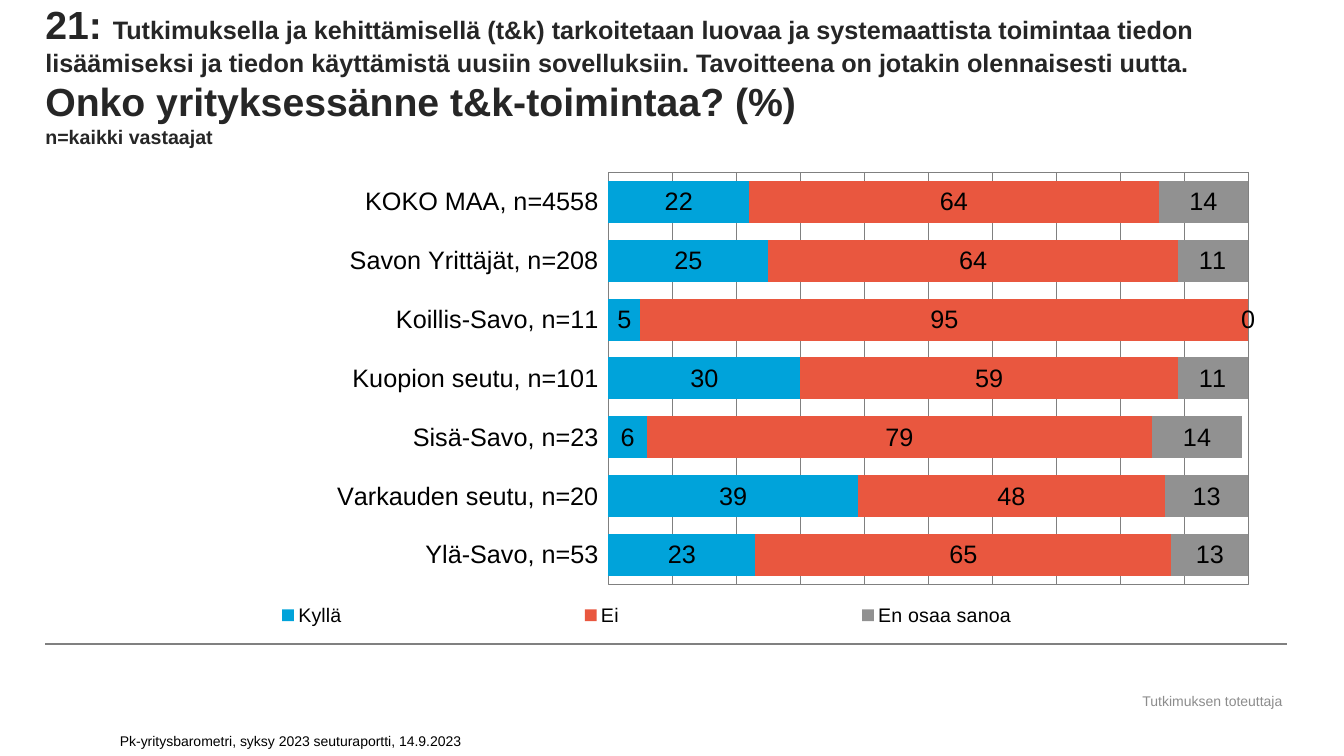
from lxml import etree
from pptx import Presentation
from pptx.chart.data import CategoryChartData
from pptx.dml.color import RGBColor
from pptx.enum.chart import XL_CHART_TYPE, XL_LEGEND_POSITION, XL_TICK_LABEL_POSITION, XL_TICK_MARK
from pptx.enum.shapes import MSO_CONNECTOR
from pptx.enum.text import MSO_ANCHOR, PP_ALIGN
from pptx.oxml import parse_xml
from pptx.oxml.ns import nsdecls, qn
from pptx.util import Inches, Pt

STACKED = XL_CHART_TYPE.BAR_STACKED
BOTTOM, MIDDLE = MSO_ANCHOR.BOTTOM, MSO_ANCHOR.MIDDLE
LEFT, CENTER = PP_ALIGN.LEFT, PP_ALIGN.CENTER
FONT = "Arial"
COLORS = {
    "title": "262626", "text": "000000", "note": "8C8C8C", "line": "808080",
    "yes": "00A3DA", "no": "E9573F", "unsure": "919191",
}


def color(name):
    return RGBColor.from_string(COLORS[name])


def add_text(runs, at, tone="text", bold=False, anchor=BOTTOM, align=LEFT, inset=None):
    box = slide.shapes.add_textbox(*[Inches(n) for n in at])
    frame = box.text_frame
    frame.word_wrap = True
    frame.vertical_anchor = anchor
    if inset is not None:
        frame.margin_left = frame.margin_right = Inches(inset)
        frame.margin_top = frame.margin_bottom = Inches(inset)
    para = frame.paragraphs[0]
    para.alignment = align
    for text, size in runs:
        if text == "\n":
            para.add_line_break()
            continue
        run = para.add_run()
        run.text = text
        run.font.name = FONT
        run.font.size = Pt(size)
        run.font.bold = bold
        run.font.color.rgb = color(tone)


deck = Presentation()
deck.slide_width, deck.slide_height = Inches(13.33), Inches(7.5)
slide = deck.slides.add_slide(deck.slide_layouts[6])

add_text([("Tutkimuksen toteuttaja", 10)], (11.16, 6.82, 1.73, 0.26),
         tone="note", anchor=MIDDLE, align=CENTER)

rule = slide.shapes.add_connector(
    MSO_CONNECTOR.STRAIGHT, Inches(0.45), Inches(6.39), Inches(12.76), Inches(6.39))
rule.line.color.rgb = color("line")
rule.line.width = Pt(1.5)
etree.SubElement(rule._element.spPr, qn("a:effectLst"))

title = [
    ("21: ", 28),
    ("Tutkimuksella ja kehittämisellä (t&k) tarkoitetaan luovaa ja systemaattista "
     "toimintaa tiedon lisäämiseksi ja tiedon käyttämistä uusiin sovelluksiin. "
     "Tavoitteena on jotakin olennaisesti uutta. ", 18),
    ("Onko yrityksessänne t&k-toimintaa? (%)", 28),
    ("\n", 28),
    ("n=kaikki vastaajat", 14),
]
add_text(title, (0.45, 0.25, 12.3, 1.22), tone="title", bold=True, inset=0)
add_text([("Pk-yritysbarometri, syksy 2023 seuturaportti, 14.9.2023", 10)],
         (1.09, 7.13, 5.41, 0.35))

data = CategoryChartData()
data.categories = [
    "KOKO MAA, n=4558", "Savon Yrittäjät, n=208", "Koillis-Savo, n=11",
    "Kuopion seutu, n=101", "Sisä-Savo, n=23", "Varkauden seutu, n=20", "Ylä-Savo, n=53",
]
data.add_series("Kyllä", (22, 25, 5, 30, 6, 39, 23))
data.add_series("Ei", (64, 64, 95, 59, 79, 48, 65))
data.add_series("En osaa sanoa", (14, 11, 0, 11, 14, 13, 13))
chart = slide.shapes.add_chart(
    STACKED, Inches(0.45), Inches(1.55), Inches(12.3), Inches(4.72), data).chart
chart.has_title = False
chart.font.name = FONT
chart.font.size = Pt(18)
chart.font.color.rgb = color("text")

plot = chart.plots[0]
plot.gap_width = 40
plot.overlap = 100
plot.vary_by_categories = False
for series, name in zip(plot.series, ("yes", "no", "unsure")):
    series.format.fill.solid()
    series.format.fill.fore_color.rgb = color(name)
    series.invert_if_negative = False
    labels = series.data_labels
    labels.show_value = True
    labels.number_format = "#,##0"
    labels.number_format_is_linked = False
    labels.font.name = FONT
    labels.font.size = Pt(18)
    labels.font.color.rgb = color("text")

rows = chart.category_axis
rows.reverse_order = True
rows.major_tick_mark = rows.minor_tick_mark = XL_TICK_MARK.NONE
rows.tick_label_position = XL_TICK_LABEL_POSITION.LOW
rows.format.line.color.rgb = color("line")
rows.format.line.width = Pt(0.75)

scale = chart.value_axis
scale.minimum_scale, scale.maximum_scale, scale.major_unit = 0, 100, 10
scale.has_major_gridlines = True
scale.major_gridlines.format.line.color.rgb = color("line")
scale.major_gridlines.format.line.width = Pt(0.75)
scale.visible = False

chart.has_legend = True
legend = chart.legend
legend.position = XL_LEGEND_POSITION.RIGHT
legend.include_in_layout = False
legend.font.name = FONT
legend.font.size = Pt(14)
legend.font.color.rgb = color("text")

area = chart._chartSpace.chart.plotArea
key = legend._element
places = [
    (area, (0.454, 0.034, 0.516, 0.866), '<c:layoutTarget val="inner"/>'),
    (key, (0, 0.93, 0.97, 0.07), ""),
]
for part, nums, target in places:
    for old in part.findall(qn("c:layout")):
        part.remove(old)
    modes = "".join(f'<c:{side}Mode val="edge"/>' for side in "xy")
    sizes = "".join(f'<c:{side} val="{num}"/>' for side, num in zip("xywh", nums))
    layout = parse_xml(
        f'<c:layout {nsdecls("c")}><c:manualLayout>{target}{modes}{sizes}'
        '</c:manualLayout></c:layout>')
    part.insert(0 if part is area else 1, layout)

area.append(parse_xml(
    f'<c:spPr {nsdecls("c", "a")}><a:noFill/><a:ln w="9525"><a:solidFill>'
    f'<a:srgbClr val="{COLORS["line"]}"/></a:solidFill></a:ln></c:spPr>'))

deck.save("out.pptx")
